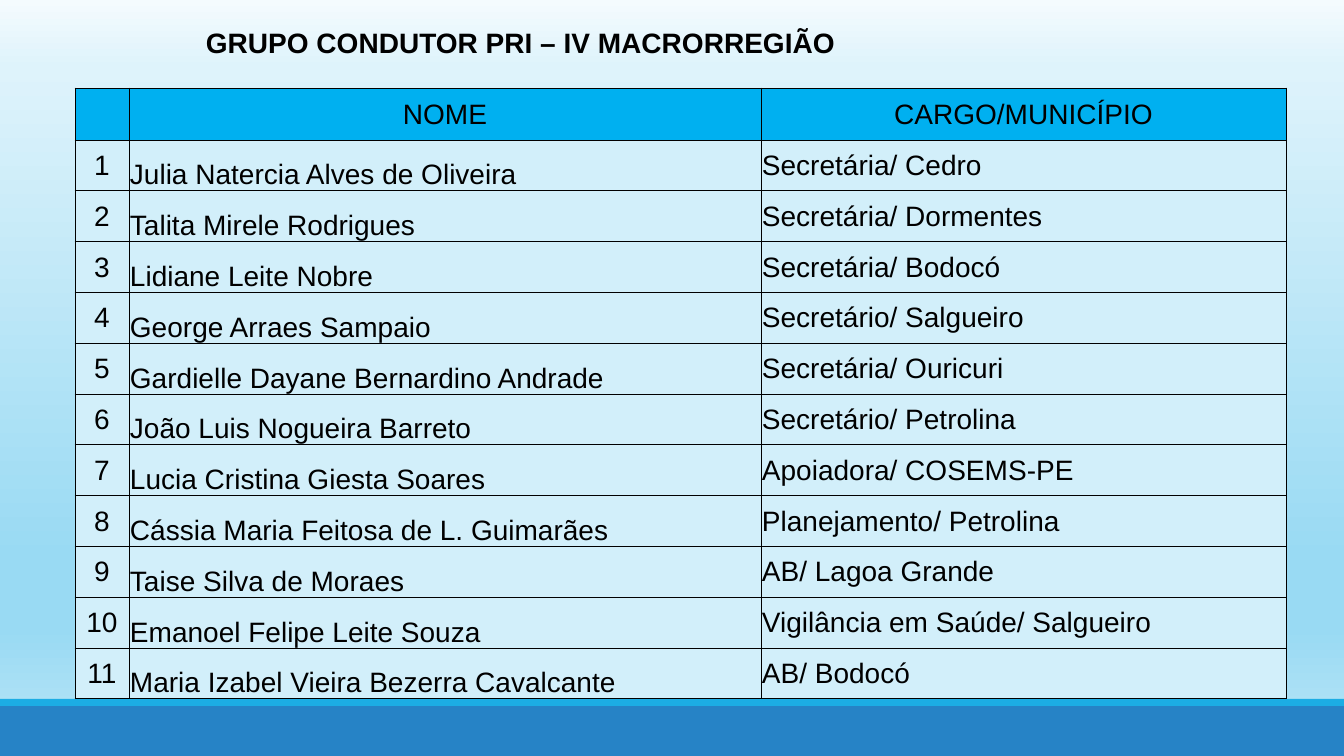
from lxml.etree import SubElement
from pptx import Presentation
from pptx.dml.color import RGBColor as RGB
from pptx.enum.shapes import MSO_SHAPE as SHAPE
from pptx.enum.text import MSO_ANCHOR as ANCHOR, PP_ALIGN as ALIGN
from pptx.oxml.ns import qn
from pptx.util import Pt

BLACK = RGB(0x00, 0x00, 0x00)
SKY = RGB(0x00, 0xB0, 0xF0)
PALE = RGB(0xD2, 0xEF, 0xFA)
BLUE = RGB(0x26, 0x83, 0xC6)
CYAN = RGB(0x1C, 0xAD, 0xE4)
FADE = [
    (0, RGB(0xF4, 0xFB, 0xFE)),
    (9, RGB(0xDE, 0xF3, 0xFB)),
    (74, RGB(0x99, 0xDA, 0xF3)),
    (83, RGB(0x99, 0xDA, 0xF3)),
    (100, RGB(0xBB, 0xE6, 0xF7)),
]
TITLE = "GRUPO CONDUTOR PRI – IV MACRORREGIÃO"
HEAD = ("", "NOME", "CARGO/MUNICÍPIO")
PEOPLE = [
    ("Julia Natercia Alves de Oliveira", "Secretária/ Cedro"),
    ("Talita Mirele Rodrigues", "Secretária/ Dormentes"),
    ("Lidiane Leite Nobre", "Secretária/ Bodocó"),
    ("George Arraes Sampaio", "Secretário/ Salgueiro"),
    ("Gardielle Dayane Bernardino Andrade", "Secretária/ Ouricuri"),
    ("João Luis Nogueira Barreto", "Secretário/ Petrolina"),
    ("Lucia Cristina Giesta Soares", "Apoiadora/ COSEMS-PE"),
    ("Cássia Maria Feitosa de L. Guimarães", "Planejamento/ Petrolina"),
    ("Taise Silva de Moraes", "AB/ Lagoa Grande"),
    ("Emanoel Felipe Leite Souza", "Vigilância em Saúde/ Salgueiro"),
    ("Maria Izabel Vieira Bezerra Cavalcante", "AB/ Bodocó"),
]
COLS = (54, 632, 525)
HEAD_H, BODY_H = 52, 559


def px(n):
    return round(n * 914400 / 100.8)


def add_fade(slide):
    fill = slide.background.fill
    fill.gradient()
    fill.gradient_angle = 270
    stops = slide.element.find(".//" + qn("a:gsLst"))
    for stop in list(stops):
        stops.remove(stop)
    for pos, color in FADE:
        stop = SubElement(stops, qn("a:gs"), pos=str(pos * 1000))
        SubElement(stop, qn("a:srgbClr"), val=str(color))


def add_bar(slide, top, height, color):
    bar = slide.shapes.add_shape(SHAPE.RECTANGLE, 0, px(top), px(1344), px(height))
    bar.shadow.inherit = False
    bar.fill.solid()
    bar.fill.fore_color.rgb = color
    bar.line.fill.background()


def add_run(para, text, bold=False):
    run = para.add_run()
    run.text = text
    font = run.font
    font.name, font.size, font.bold = "Arial", Pt(20), bold
    font.color.rgb = BLACK


def add_title(slide):
    box = slide.shapes.add_textbox(px(196), px(21), px(969), px(44))
    box.text_frame.word_wrap = True
    add_run(box.text_frame.paragraphs[0], TITLE, True)


def set_edges(cell):
    props = cell._tc.get_or_add_tcPr()
    for i, side in enumerate("LRTB"):
        edge = props.makeelement(qn("a:ln" + side), {"w": str(Pt(0.5))})
        props.insert(i, edge)
        fill = SubElement(edge, qn("a:solidFill"))
        SubElement(fill, qn("a:srgbClr"), val=str(BLACK))


def fill_cell(cell, text, color, align, anchor):
    cell.margin_left = cell.margin_right = cell.margin_top = px(1)
    cell.margin_bottom = 0
    cell.vertical_anchor = anchor
    cell.fill.solid()
    cell.fill.fore_color.rgb = color
    set_edges(cell)
    para = cell.text_frame.paragraphs[0]
    para.alignment = align
    if text:
        add_run(para, text)


def add_group(slide):
    rows = [HEAD] + [(str(n), *who) for n, who in enumerate(PEOPLE, 1)]
    frame = slide.shapes.add_table(
        len(rows), len(COLS), px(75), px(88), px(sum(COLS)), px(HEAD_H + BODY_H))
    table = frame.table
    for col, width in zip(table.columns, COLS):
        col.width = px(width)
    for r, row in enumerate(rows):
        table.rows[r].height = px(BODY_H) // len(PEOPLE) if r else px(HEAD_H)
        for c, text in enumerate(row):
            align = ALIGN.LEFT if r and c else ALIGN.CENTER
            anchor = ANCHOR.BOTTOM if r and c == 1 else ANCHOR.MIDDLE
            fill_cell(table.cell(r, c), text, PALE if r else SKY, align, anchor)


def main():
    """Build the slide that lists the group and save it."""
    deck = Presentation()
    deck.slide_width, deck.slide_height = px(1344), px(756)
    slide = deck.slides.add_slide(deck.slide_layouts[6])
    add_fade(slide)
    add_bar(slide, 706, 50, BLUE)
    add_bar(slide, 699, 7, CYAN)
    add_group(slide)
    add_title(slide)
    deck.save("out.pptx")


if __name__ == "__main__":
    main()
